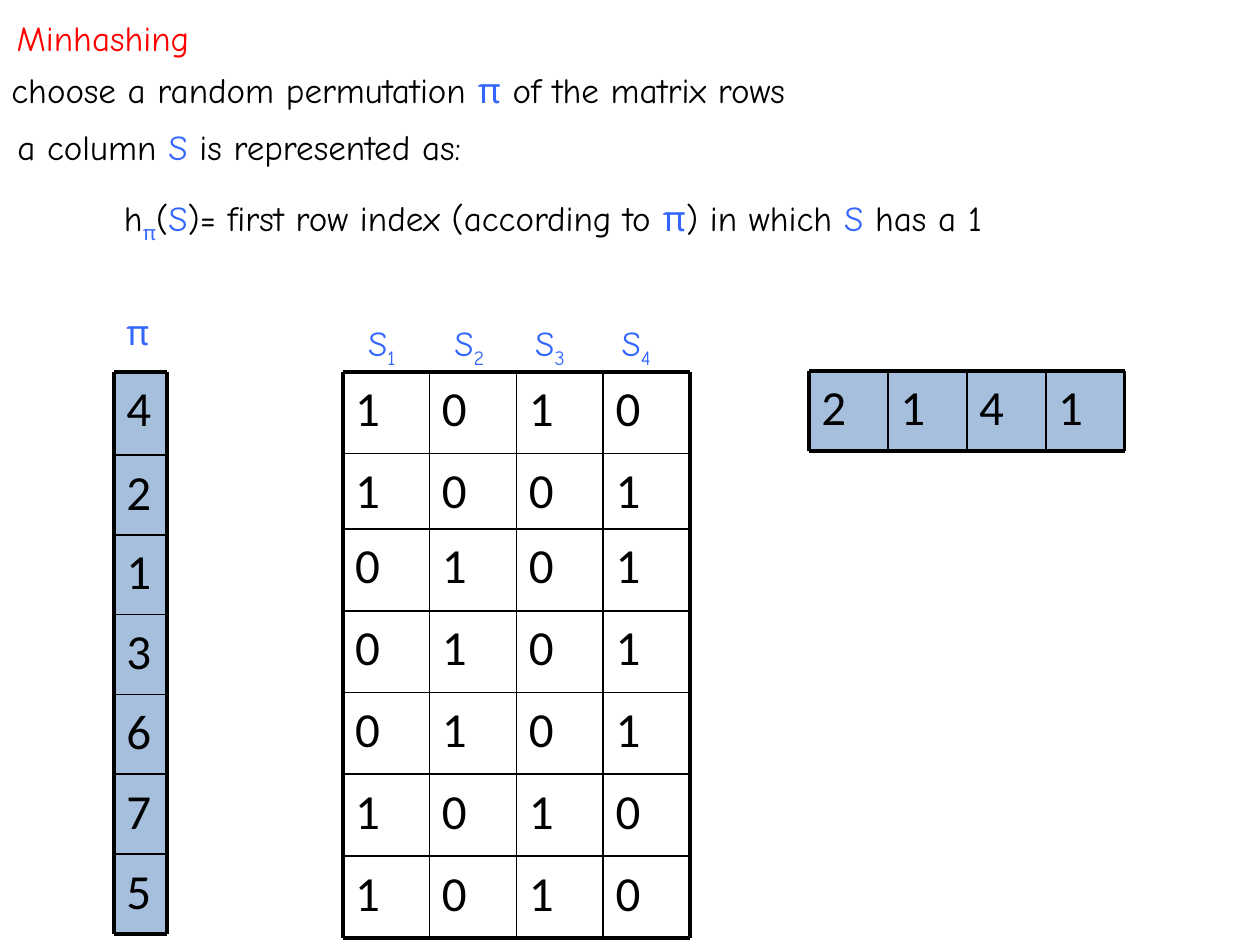
from itertools import accumulate

from lxml import etree
from pptx import Presentation
from pptx.dml.color import RGBColor
from pptx.enum import shapes, text
from pptx.oxml import ns
from pptx.util import Cm, Pt

BLACK, RED, BLUE, CELL_BLUE = "000000", "FF0000", "3366FF", "4F81BD"


def write(box, pieces, colour=BLACK, size=20, font="Comic Neue"):
    """Fill a box with (text, style) pieces; style is "", "blue" or "sub"."""
    frame = box.text_frame
    frame.word_wrap = True
    frame.auto_size = text.MSO_AUTO_SIZE.NONE
    frame.vertical_anchor = text.MSO_ANCHOR.TOP
    para = frame.paragraphs[0]
    para.alignment = text.PP_ALIGN.LEFT
    para.font.size, para.font.name = Pt(size), font
    for words, style in pieces:
        span = para.add_run()
        span.text = words
        span.font.color.rgb = RGBColor.from_string(BLUE if style else colour)
        if style == "sub":
            span.font._element.set("baseline", "-25000")
    return para


def add_grid(left, top, col_width, heights, rows, fill=None):
    """Add a group of cells with a thick frame and thin inner lines."""
    grid = page.shapes.add_group_shape().shapes
    xs = [left + col_width * c for c in range(len(rows[0]) + 1)]
    ys = list(accumulate(heights, initial=top))
    for values, y, height in zip(rows, ys, heights):
        for value, x in zip(values, xs):
            area = Cm(x), Cm(y), Cm(col_width), Cm(height)
            if fill:
                cell = grid.add_shape(shapes.MSO_SHAPE.RECTANGLE, *area)
                cell.shadow.inherit = False
                cell.line.fill.background()
                cell.fill.solid()
                cell.fill.fore_color.rgb = RGBColor.from_string(fill)
                tint = cell.fill._xPr.find(".//" + ns.qn("a:srgbClr"))
                etree.SubElement(tint, ns.qn("a:alpha"), val="50000")
            else:
                cell = grid.add_textbox(*area)
            para = write(cell, [(value, "")], size=28, font="Calibri")
            before = etree.Element(ns.qn("a:spcBef"))
            etree.SubElement(before, ns.qn("a:spcPct"), val="20000")
            para._p.get_or_add_pPr().insert(0, before)
    lines = [(xs[0], y, xs[-1], y, y in (ys[0], ys[-1])) for y in ys]
    lines += [(x, ys[0], x, ys[-1], x in (xs[0], xs[-1])) for x in xs]
    for *ends, is_outer in lines:
        line = grid.add_connector(shapes.MSO_CONNECTOR.STRAIGHT, *map(Cm, ends))
        line.line.color.rgb = RGBColor.from_string(BLACK)
        line.line.width = Pt(2.25 if is_outer else 1)
        etree.SubElement(line._element.spPr, ns.qn("a:effectLst"))


deck = Presentation()
deck.slide_width, deck.slide_height = Cm(25.4), Cm(19.05)
page = deck.slides.add_slide(deck.slide_layouts[5])

title = page.shapes.title
title.left, title.top, title.width, title.height = Cm(0.08), Cm(0.2), Cm(24.61), Cm(1.12)
write(title, [("Minhashing", "")], RED)

permutation = "4213675"
matrix = ["1010", "1001", "0101", "0101", "0101", "1010", "1010"]
signature = "2141"
add_grid(6.91, 7.49, 1.75, [1.65, 1.52] + [1.65] * 5, matrix)
add_grid(2.3, 7.49, 1.06, [1.68] + [1.61] * 6, permutation, CELL_BLUE)
add_grid(16.31, 7.47, 1.59, [1.63], [signature], CELL_BLUE)

# Explanations and the label of the permutation: left, top, width, pieces
texts = [
    (-0.02, 1.25, 17.53, [("choose a random permutation ", ""), ("π", "blue"),
                          (" of the matrix rows", "")]),
    (0.1, 2.41, 21.79, [("a column ", ""), ("S", "blue"), (" is represented as:", "")]),
    (2.25, 3.84, 20.07, [("h", ""), ("π", "sub"), ("(", ""), ("S", "blue"),
                         (")= first row index (according to ", ""), ("π", "blue"),
                         (") in which ", ""), ("S", "blue"), (" has a 1", "")]),
    (2.3, 6.13, 1.06, [("π", "blue")]),
]
# Column labels of the matrix
for number, left in enumerate((7.17, 8.91, 10.54, 12.28), start=1):
    texts.append((left, 6.36, 1.5, [("S", "blue"), (str(number), "sub")]))
for left, top, width, pieces in texts:
    write(page.shapes.add_textbox(Cm(left), Cm(top), Cm(width), Cm(1.12)), pieces)

deck.save("out.pptx")
